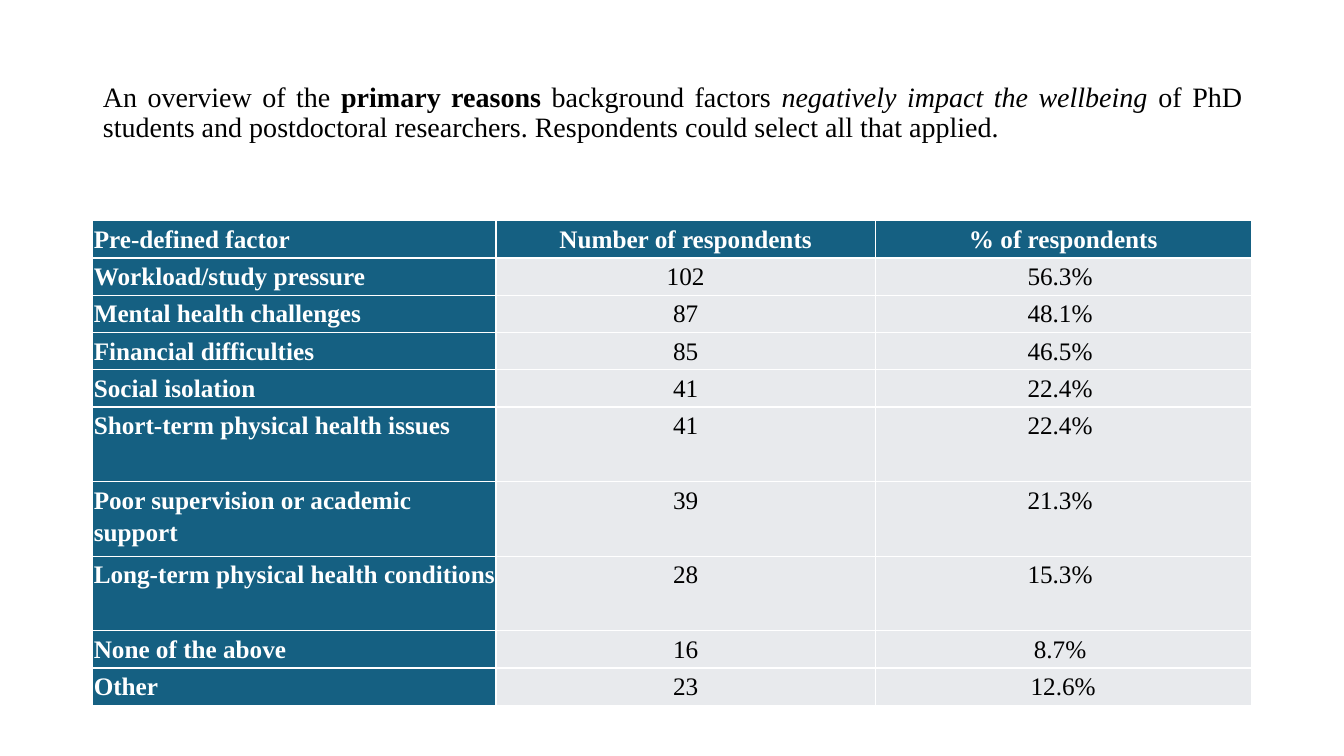
from pptx import Presentation
from pptx.dml.color import RGBColor
from pptx.enum.text import MSO_ANCHOR, PP_ALIGN
from pptx.util import Inches, Pt

FACE = "Times New Roman"
BLUE, GREY, WHITE, BLACK = "156082", "E8EAED", "FFFFFF", "000000"


def style(font, size, color, bold=False, italic=False):
    font.name = FACE
    font.size = Pt(size)
    font.color.rgb = RGBColor.from_string(color)
    font.bold = bold
    font.italic = italic


deck = Presentation()
deck.slide_width = Inches(13.33)
deck.slide_height = Inches(7.5)
slide = deck.slides.add_slide(deck.slide_layouts[5])

# Title
title = slide.shapes.title
title.left, title.top = Inches(0.92), Inches(0.4)
title.width, title.height = Inches(11.5), Inches(1.45)
title.text_frame.vertical_anchor = MSO_ANCHOR.MIDDLE
title.text_frame.word_wrap = True
para = title.text_frame.paragraphs[0]
para.alignment = PP_ALIGN.JUSTIFY
para.line_spacing = 0.9
parts = [
    ("An overview of the ", False, False),
    ("primary reasons", True, False),
    (" background factors ", False, False),
    ("negatively impact the wellbeing ", False, True),
    ("of PhD students and postdoctoral researchers. "
     "Respondents could select all that applied. ", False, False),
]
for text, bold, italic in parts:
    run = para.add_run()
    run.text = text
    style(run.font, 20, BLACK, bold, italic)

# Table: row height in lines, then the three cells
rows = [
    (1, "Pre-defined factor", "Number of respondents", "% of respondents"),
    (1, "Workload/study pressure", "102", "56.3% "),
    (1, "Mental health challenges", "87", "48.1% "),
    (1, "Financial difficulties", "85", "46.5% "),
    (1, "Social isolation", "41", "22.4% "),
    (2, "Short-term physical health issues", "41", "22.4% "),
    (2, "Poor supervision or academic support", "39", "21.3% "),
    (2, "Long-term physical health conditions", "28", "15.3% "),
    (1, "None of the above", "16", "8.7% "),
    (1, "Other", "23", "12.6%"),
]
frame = slide.shapes.add_table(len(rows), 3, Inches(0.92), Inches(2.19),
                               Inches(11.5), Inches(4.83))
table = frame.table
table.first_col = True
table.horz_banding = False
for col, width in zip(table.columns, (4, 3.76, 3.73)):
    col.width = Inches(width)

for r, (lines, *texts) in enumerate(rows):
    table.rows[r].height = Inches(0.37 * lines)
    for c, text in enumerate(texts):
        cell = table.cell(r, c)
        head = r == 0 or c == 0
        cell.fill.solid()
        cell.fill.fore_color.rgb = RGBColor.from_string(BLUE if head else GREY)
        cell.margin_left = cell.margin_right = cell.margin_top = Inches(0.01)
        cell.margin_bottom = 0
        para = cell.text_frame.paragraphs[0]
        para.text = text
        para.alignment = PP_ALIGN.CENTER if c else PP_ALIGN.LEFT
        para.line_spacing = 1.15
        style(para.runs[0].font, 18, WHITE if head else BLACK, head)

deck.save("out.pptx")
